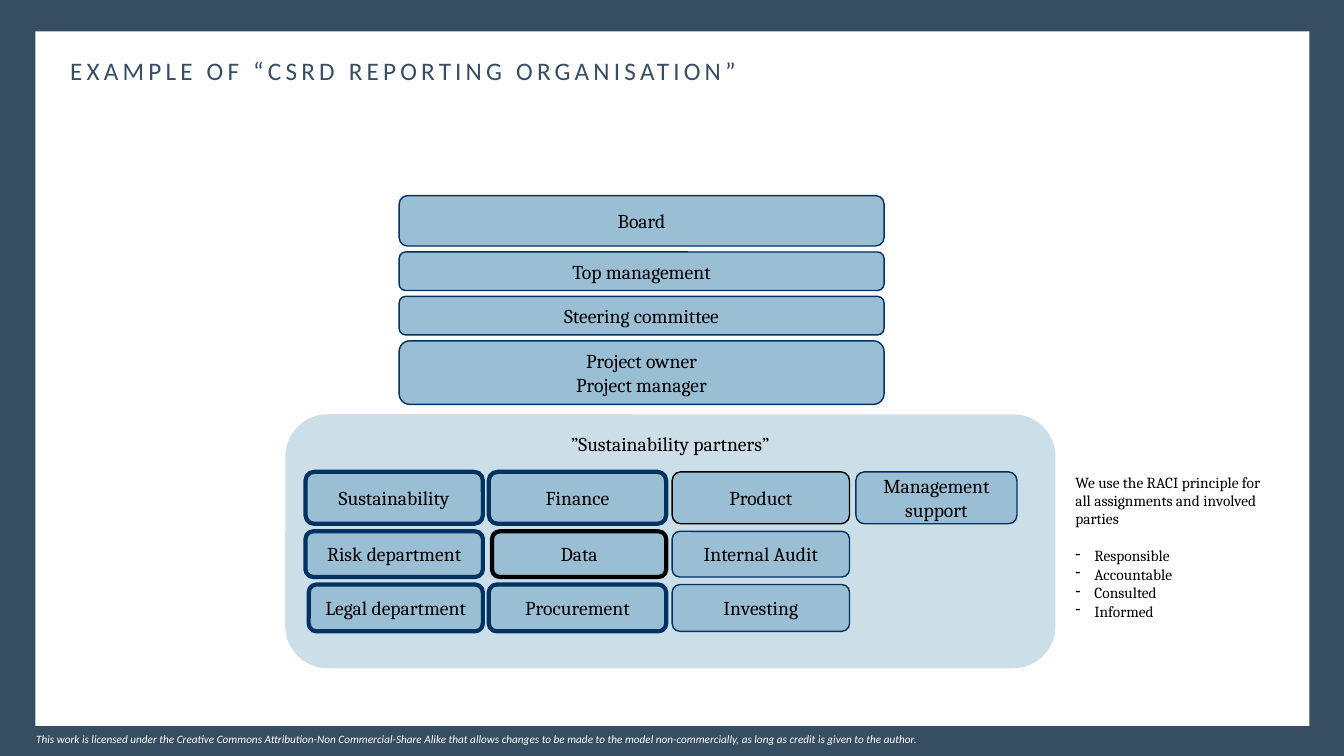
from dataclasses import dataclass

from lxml import etree
from pptx import Presentation
from pptx.dml.color import RGBColor
from pptx.enum.shapes import MSO_SHAPE
from pptx.enum.text import MSO_ANCHOR, PP_ALIGN
from pptx.oxml.ns import qn
from pptx.util import Cm, Pt

RECTANGLE = MSO_SHAPE.RECTANGLE
ROUNDED = MSO_SHAPE.FLOWCHART_ALTERNATE_PROCESS
TOP, MIDDLE = MSO_ANCHOR.TOP, MSO_ANCHOR.MIDDLE
CENTER, LEFT = PP_ALIGN.CENTER, PP_ALIGN.LEFT

SLATE, WHITE, BLACK = "374D62", "FFFFFF", "000000"
LIGHT_BLUE, NAVY = "9ABED3", "003262"
HEADING_FONT, BODY_FONT = "Calibri", "Cambria"


@dataclass(frozen=True)
class Box:
    left: float
    top: float
    width: float
    height: float


@dataclass(frozen=True)
class Tier:
    text: str
    height: float


@dataclass(frozen=True)
class Department:
    text: str
    column: int
    row: int
    line_width: float = 1
    line_color: str = NAVY
    width: float = 4.47


TIER_LEFT, TIER_TOP, TIER_WIDTH, TIER_GAP = 10.06, 4.93, 12.22, 0.15
TIERS = [
    Tier("Board", 1.27),
    Tier("Top management", 0.97),
    Tier("Steering committee", 0.97),
    Tier("Project owner\nProject manager", 1.6),
]

# Departments are aligned to the right edge of their column.
COLUMN_RIGHTS = [12.17, 16.79, 21.41, 25.63]
ROW_TOPS = [11.89, 13.39, 14.73]
ROW_HEIGHTS = [1.31, 1.15, 1.18]
DEPARTMENTS = [
    Department("Sustainability", 0, 0, 3),
    Department("Finance", 1, 0, 3),
    Department("Product", 2, 0, 1, BLACK),
    Department("Management support", 3, 0, width=4.06),
    Department("Risk department", 0, 1, 3),
    Department("Data", 1, 1, 3, BLACK, 4.39),
    Department("Internal Audit", 2, 1),
    Department("Legal department", 0, 2, 3, width=4.39),
    Department("Procurement", 1, 2, 3),
    Department("Investing", 2, 2),
]

RACI_INTRO = "We use the RACI principle for all assignments and involved parties"
RACI_ROLES = ["Responsible", "Accountable", "Consulted", "Informed"]
LICENCE = (
    "This work is licensed under the Creative Commons Attribution-Non Commercial-Share Alike "
    "that allows changes to be made to the model non-commercially, "
    "as long as credit is given to the author."
)


def rgb(color: str) -> RGBColor:
    return RGBColor.from_string(color)


def write(text_frame, text: str, size: float, font: str = BODY_FONT,
          color: str = BLACK, alignment=LEFT, anchor=TOP) -> None:
    text_frame.word_wrap = True
    text_frame.vertical_anchor = anchor
    text_frame.text = text
    for paragraph in text_frame.paragraphs:
        paragraph.alignment = alignment
        for run in paragraph.runs:
            run.font.size = Pt(size)
            run.font.name = font
            run.font.color.rgb = rgb(color)


def add_filled_shape(slide, preset, box: Box, fill: str):
    shape = slide.shapes.add_shape(
        preset, Cm(box.left), Cm(box.top), Cm(box.width), Cm(box.height))
    shape.shadow.inherit = False
    shape.fill.solid()
    shape.fill.fore_color.rgb = rgb(fill)
    shape.line.fill.background()
    return shape


def add_unit(slide, text: str, box: Box, line_width: float = 1,
             line_color: str = NAVY) -> None:
    """Draw one outlined, labelled unit of the organisation."""
    shape = add_filled_shape(slide, ROUNDED, box, LIGHT_BLUE)
    shape.line.color.rgb = rgb(line_color)
    shape.line.width = Pt(line_width)
    write(shape.text_frame, text, 14, alignment=CENTER, anchor=MIDDLE)


def add_text(slide, text: str, box: Box, size: float, font: str, color: str):
    text_box = slide.shapes.add_textbox(
        Cm(box.left), Cm(box.top), Cm(box.width), Cm(box.height))
    write(text_box.text_frame, text, size, font, color)
    return text_box.text_frame


def add_tiers(slide) -> None:
    top = TIER_TOP
    for tier in TIERS:
        add_unit(slide, tier.text, Box(TIER_LEFT, top, TIER_WIDTH, tier.height))
        top += tier.height + TIER_GAP


def add_partners(slide) -> None:
    panel = add_filled_shape(slide, ROUNDED, Box(7.19, 10.44, 19.41, 6.4), LIGHT_BLUE)
    panel_color = panel.fill._xPr.find(qn("a:solidFill"))[0]
    etree.SubElement(panel_color, qn("a:alpha"), val="50000")
    write(panel.text_frame, "”Sustainability partners”", 14, alignment=CENTER)
    for department in DEPARTMENTS:
        box = Box(COLUMN_RIGHTS[department.column] - department.width,
                  ROW_TOPS[department.row], department.width,
                  ROW_HEIGHTS[department.row])
        add_unit(slide, department.text, box,
                 department.line_width, department.line_color)


def add_raci_note(slide) -> None:
    text_frame = add_text(slide, "\n".join([RACI_INTRO, *RACI_ROLES]),
                          Box(27.1, 11.91, 4.98, 3.76), 11, BODY_FONT, BLACK)
    text_frame.margin_left = text_frame.margin_right = 0
    text_frame.margin_top = text_frame.margin_bottom = 0
    roles = text_frame.paragraphs[1:]
    for paragraph in roles:
        properties = paragraph._p.get_or_add_pPr()
        properties.set("marL", str(Cm(0.48)))
        properties.set("indent", str(-Cm(0.48)))
        etree.SubElement(properties, qn("a:buChar"), char="-")
    roles[0].space_before = Pt(13)


def main() -> None:
    presentation = Presentation()
    presentation.slide_width, presentation.slide_height = Cm(33.87), Cm(19.05)
    slide = presentation.slides.add_slide(presentation.slide_layouts[6])
    slide.background.fill.solid()
    slide.background.fill.fore_color.rgb = rgb(SLATE)
    add_filled_shape(slide, RECTANGLE, Box(0.89, 0.79, 32.11, 17.5), WHITE)

    licence = add_text(slide, LICENCE, Box(0.66, 18.34, 28.7, 0.61),
                       8, HEADING_FONT, WHITE)
    licence.paragraphs[0].runs[0].font.italic = True
    title = add_text(slide, "EXAMPLE OF “CSRD REPORTING ORGANISATION”",
                     Box(1.52, 1.27, 24.49, 1.8), 18, HEADING_FONT, SLATE)
    title.paragraphs[0].runs[0].font._element.set("spc", "300")

    add_tiers(slide)
    add_partners(slide)
    add_raci_note(slide)
    presentation.save("out.pptx")


if __name__ == "__main__":
    main()
